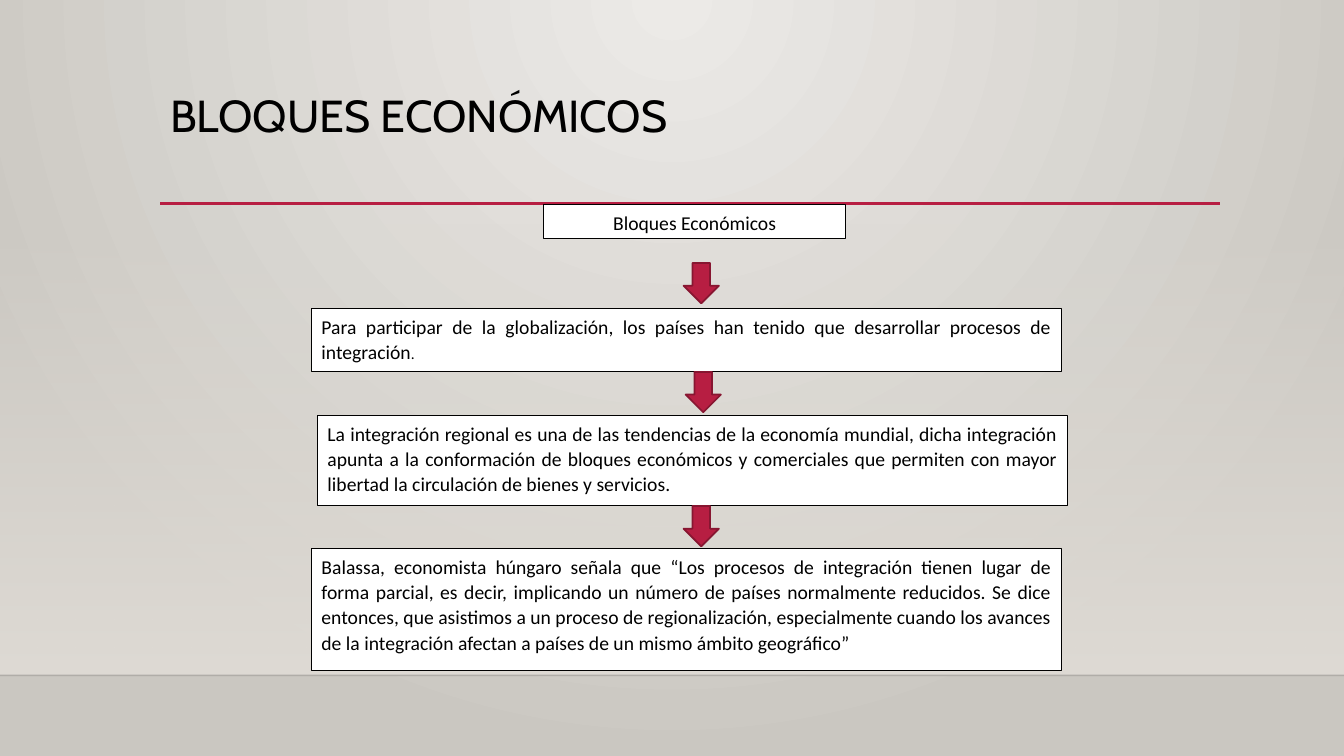
from lxml import etree
from pptx import Presentation, util as u
from pptx.dml.color import RGBColor
from pptx.enum import shapes, text
from pptx.oxml import parse_xml
from pptx.oxml.ns import nsdecls, qn

# Content
TITLE = "BLOQUES ECONÓMICOS"
LEFT, CENTRE = text.PP_ALIGN.LEFT, text.PP_ALIGN.CENTER
JUSTIFY = text.PP_ALIGN.JUSTIFY
# Each step: left, top, width, height, alignment, text, smaller ending
STEPS = [
    (5.39, 2.03, 3, 0.34, CENTRE, "Bloques Económicos", ""),
    (3.09, 3.06, 7.44, 0.63, JUSTIFY,
     "Para participar de la globalización, los países han tenido que "
     "desarrollar procesos de integración", "."),
    (3.15, 4.12, 7.44, 0.9, JUSTIFY,
     "La integración regional es una de las tendencias de la economía mundial, "
     "dicha integración apunta a la conformación de bloques económicos y "
     "comerciales que permiten con mayor libertad la circulación de bienes y "
     "servicios.", ""),
    (3.09, 5.44, 7.44, 1.21, JUSTIFY,
     "Balassa, economista húngaro señala que “Los procesos de integración tienen "
     "lugar de forma parcial, es decir, implicando un número de países normalmente "
     "reducidos. Se dice entonces, que asistimos a un proceso de regionalización, "
     "especialmente cuando los avances de la integración afectan a países de un "
     "mismo ámbito geográfico”", ""),
]
ARROWS = [(6.78, 2.61), (6.8, 3.69), (6.78, 5.02)]
ARROW_SIZE = (0.35, 0.4)

# Layout and colours
WIDTH, HEIGHT = 13.33, 7.5
WALL_TOP, FLOOR = 2.21, 6.7
MARGIN, RULE_Y, RULE_END = 1.59, 2.02, 12.1
BLACK = RGBColor(0, 0, 0)
WHITE = RGBColor(255, 255, 255)
CRIMSON = RGBColor(0xB7, 0x1E, 0x42)
DARK_CRIMSON = RGBColor(0x87, 0x16, 0x31)
PALE, GREY = RGBColor(0xEC, 0xEA, 0xE7), RGBColor(0xCA, 0xC7, 0xC1)
SAND = RGBColor(0xDF, 0xDB, 0xD5)
RADIAL = ('<a:path path="circle">'
          '<a:fillToRect l="43000" r="43000" b="100000"/></a:path>')
DOWNWARD = '<a:lin ang="5400000" scaled="0"/>'


def inches(*lengths):
    return [u.Inches(length) for length in lengths]


def set_gradient(parent, start, end, direction, start_alpha=100):
    """Swap the solid fill of parent for a two-stop gradient."""
    gradient = parse_xml(
        f'<a:gradFill {nsdecls("a")} rotWithShape="1"><a:gsLst>'
        f'<a:gs pos="0"><a:srgbClr val="{start}">'
        f'<a:alpha val="{start_alpha * 1000}"/></a:srgbClr></a:gs>'
        f'<a:gs pos="100000"><a:srgbClr val="{end}"/></a:gs>'
        f'</a:gsLst>{direction}</a:gradFill>')
    parent.replace(parent.find(qn("a:solidFill")), gradient)


def add_block(kind, box, fill, outline=None, weight=0):
    block = slide.shapes.add_shape(kind, *inches(*box))
    block.shadow.inherit = False
    block.fill.solid()
    block.fill.fore_color.rgb = fill
    if outline is None:
        block.line.fill.background()
    else:
        block.line.color.rgb = outline
        block.line.width = u.Pt(weight)
    return block


def add_rule(x1, x2, y, colour, weight):
    rule = slide.shapes.add_connector(
        shapes.MSO_CONNECTOR.STRAIGHT, *inches(x1, y, x2, y))
    rule.line.color.rgb = colour
    rule.line.width = u.Pt(weight)
    etree.SubElement(rule.element.spPr, qn("a:effectLst"))
    return rule


def write(shape, words, font, size, align, spacing, ending=""):
    frame = shape.text_frame
    frame.word_wrap = True
    frame.vertical_anchor = text.MSO_ANCHOR.TOP
    paragraph = frame.paragraphs[0]
    paragraph.alignment = align
    paragraph.line_spacing = spacing
    paragraph.font.name = font
    paragraph.font.size = u.Pt(size)
    paragraph.font.color.rgb = BLACK
    paragraph.add_run().text = words
    if ending:
        tail = paragraph.add_run()
        tail.text = ending
        tail.font.size = u.Pt(11)


prs = Presentation()
prs.slide_width, prs.slide_height = inches(WIDTH, HEIGHT)
slide = prs.slides.add_slide(prs.slide_layouts[6])

# Backdrop: radial light, wall and floor edge
slide.background.fill.solid()
set_gradient(slide.element.find(".//" + qn("p:bgPr")), PALE, GREY, RADIAL)
wall = add_block(shapes.MSO_SHAPE.RECTANGLE,
                 (0, WALL_TOP, WIDTH, FLOOR - WALL_TOP), SAND)
set_gradient(wall.element.spPr, SAND, SAND, DOWNWARD, start_alpha=0)
floor_edge = add_rule(0, WIDTH, FLOOR, BLACK, 1)
edge_colour = floor_edge.element.spPr.find(".//" + qn("a:srgbClr"))
etree.SubElement(edge_colour, qn("a:alpha")).set("val", "20000")

# Title and its rule
add_rule(MARGIN, RULE_END, RULE_Y, CRIMSON, 2.5)
title = slide.shapes.add_textbox(*inches(MARGIN, 0.88, 10.5, 1.15))
write(title, TITLE, "Cabin", 32, LEFT, 0.9)

# Steps of the flow
for *box, align, words, ending in STEPS:
    step = add_block(shapes.MSO_SHAPE.RECTANGLE, box, WHITE, BLACK, 0.75)
    write(step, words, "Calibri", 14, align, 1.07, ending)

# Arrows between steps
for corner in ARROWS:
    add_block(shapes.MSO_SHAPE.DOWN_ARROW, corner + ARROW_SIZE,
              CRIMSON, DARK_CRIMSON, 1.25)

prs.save("out.pptx")
